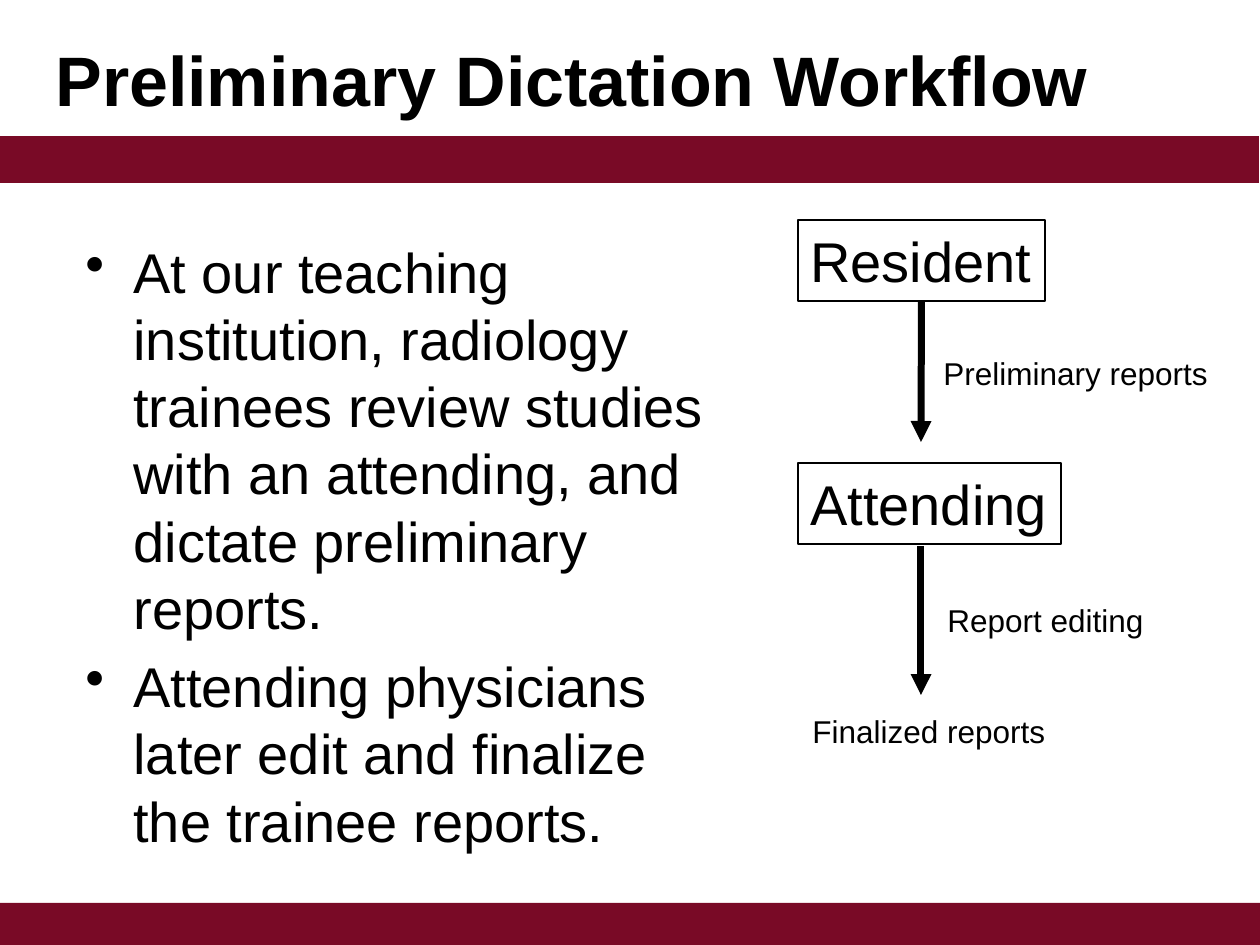
import dataclasses

import lxml.etree
import pptx
import pptx.dml.color
import pptx.enum.shapes
import pptx.enum.text
import pptx.oxml.ns
import pptx.oxml.xmlchemy
import pptx.shapes.autoshape
import pptx.shapes.connector
import pptx.slide
import pptx.util

EMU_PER_PX = 914400 / 126
BLACK = pptx.dml.color.RGBColor(0x00, 0x00, 0x00)
MAROON = pptx.dml.color.RGBColor(0x79, 0x0A, 0x26)
FONT = "Arial"
BODY_SIZE = 32
LABEL_SIZE = 18
BULLET_INDENT = 48
BOTTOM_SITE = 2


@dataclasses.dataclass(frozen=True)
class Box:
    left: int
    top: int
    width: int
    height: int


@dataclasses.dataclass(frozen=True)
class Caption:
    text: str
    box: Box


@dataclasses.dataclass(frozen=True)
class Arrow:
    x: int
    top: int
    bottom: int


BANDS = [Box(-1, 136, 1260, 47), Box(0, 903, 1261, 47)]
TITLE = Caption("Preliminary Dictation Workflow", Box(43, 0, 1176, 157))
BULLETS_BOX = Box(73, 231, 651, 630)
BULLETS = [
    "At our teaching institution, radiology trainees review studies with an "
    "attending, and dictate preliminary reports.",
    "Attending physicians later edit and finalize the trainee reports.",
]
RESIDENT = Caption("Resident", Box(798, 220, 247, 81))
ATTENDING = Caption("Attending", Box(798, 463, 263, 81))
LABELS = [
    Caption("Preliminary reports", Box(931, 348, 292, 50)),
    Caption("Report editing", Box(935, 595, 223, 50)),
    Caption("Finalized reports", Box(800, 706, 261, 50)),
]
TO_ATTENDING = Arrow(921, 301, 442)
TO_FINALIZED = Arrow(921, 546, 695)


def px(length: int) -> pptx.util.Emu:
    return pptx.util.Emu(round(length * EMU_PER_PX))


def frame(box: Box) -> tuple[pptx.util.Emu, ...]:
    return px(box.left), px(box.top), px(box.width), px(box.height)


def add_run(paragraph, text: str, size: int, bold: bool = False) -> None:
    run = paragraph.add_run()
    run.text = text
    run.font.name = FONT
    run.font.size = pptx.util.Pt(size)
    run.font.bold = bold
    run.font.color.rgb = BLACK


def add_band(slide: pptx.slide.Slide, box: Box) -> None:
    band = slide.shapes.add_shape(pptx.enum.shapes.MSO_SHAPE.RECTANGLE, *frame(box))
    band.shadow.inherit = False
    band.fill.solid()
    band.fill.fore_color.rgb = MAROON
    band.line.fill.background()


def add_caption(
    slide: pptx.slide.Slide, caption: Caption, size: int, bold: bool = False, wrap: bool = False
) -> pptx.shapes.autoshape.Shape:
    shape = slide.shapes.add_textbox(*frame(caption.box))
    shape.text_frame.word_wrap = wrap
    add_run(shape.text_frame.paragraphs[0], caption.text, size, bold)
    return shape


def add_role(slide: pptx.slide.Slide, role: Caption) -> pptx.shapes.autoshape.Shape:
    shape = add_caption(slide, role, BODY_SIZE)
    shape.line.color.rgb = BLACK
    shape.line.width = pptx.util.Pt(0.75)
    return shape


def add_bullets(slide: pptx.slide.Slide, box: Box, items: list[str]) -> None:
    text_frame = slide.shapes.add_textbox(*frame(box)).text_frame
    text_frame.word_wrap = True
    for index, item in enumerate(items):
        paragraph = text_frame.add_paragraph() if index else text_frame.paragraphs[0]
        paragraph.space_before = pptx.util.Pt(6.4)
        add_run(paragraph, item, BODY_SIZE)
        properties = paragraph._p.get_or_add_pPr()
        properties.set("marL", str(px(BULLET_INDENT)))
        properties.set("indent", str(px(-BULLET_INDENT)))
        bullet = lxml.etree.SubElement(properties, pptx.oxml.ns.qn("a:buChar"))
        bullet.set("char", "•")


def add_arrow(slide: pptx.slide.Slide, arrow: Arrow) -> pptx.shapes.connector.Connector:
    connector = slide.shapes.add_connector(
        pptx.enum.shapes.MSO_CONNECTOR.STRAIGHT,
        px(arrow.x), px(arrow.top), px(arrow.x), px(arrow.bottom),
    )
    connector.line.color.rgb = BLACK
    connector.line.width = pptx.util.Pt(4)
    head = lxml.etree.SubElement(connector.line._get_or_add_ln(), pptx.oxml.ns.qn("a:tailEnd"))
    head.set("type", "triangle")
    lxml.etree.SubElement(connector._element.spPr, pptx.oxml.ns.qn("a:effectLst"))
    return connector


def main() -> None:
    presentation = pptx.Presentation()
    presentation.slide_width = px(1260)
    presentation.slide_height = px(945)
    slide = presentation.slides.add_slide(presentation.slide_layouts[6])

    for band in BANDS:
        add_band(slide, band)
    title = add_caption(slide, TITLE, 40, bold=True, wrap=True)
    title.text_frame.vertical_anchor = pptx.enum.text.MSO_ANCHOR.MIDDLE
    add_bullets(slide, BULLETS_BOX, BULLETS)

    resident = add_role(slide, RESIDENT)
    add_role(slide, ATTENDING)
    add_arrow(slide, TO_ATTENDING).begin_connect(resident, BOTTOM_SITE)
    add_arrow(slide, TO_FINALIZED)
    for label in LABELS:
        add_caption(slide, label, LABEL_SIZE)

    presentation.save("out.pptx")


if __name__ == "__main__":
    main()
